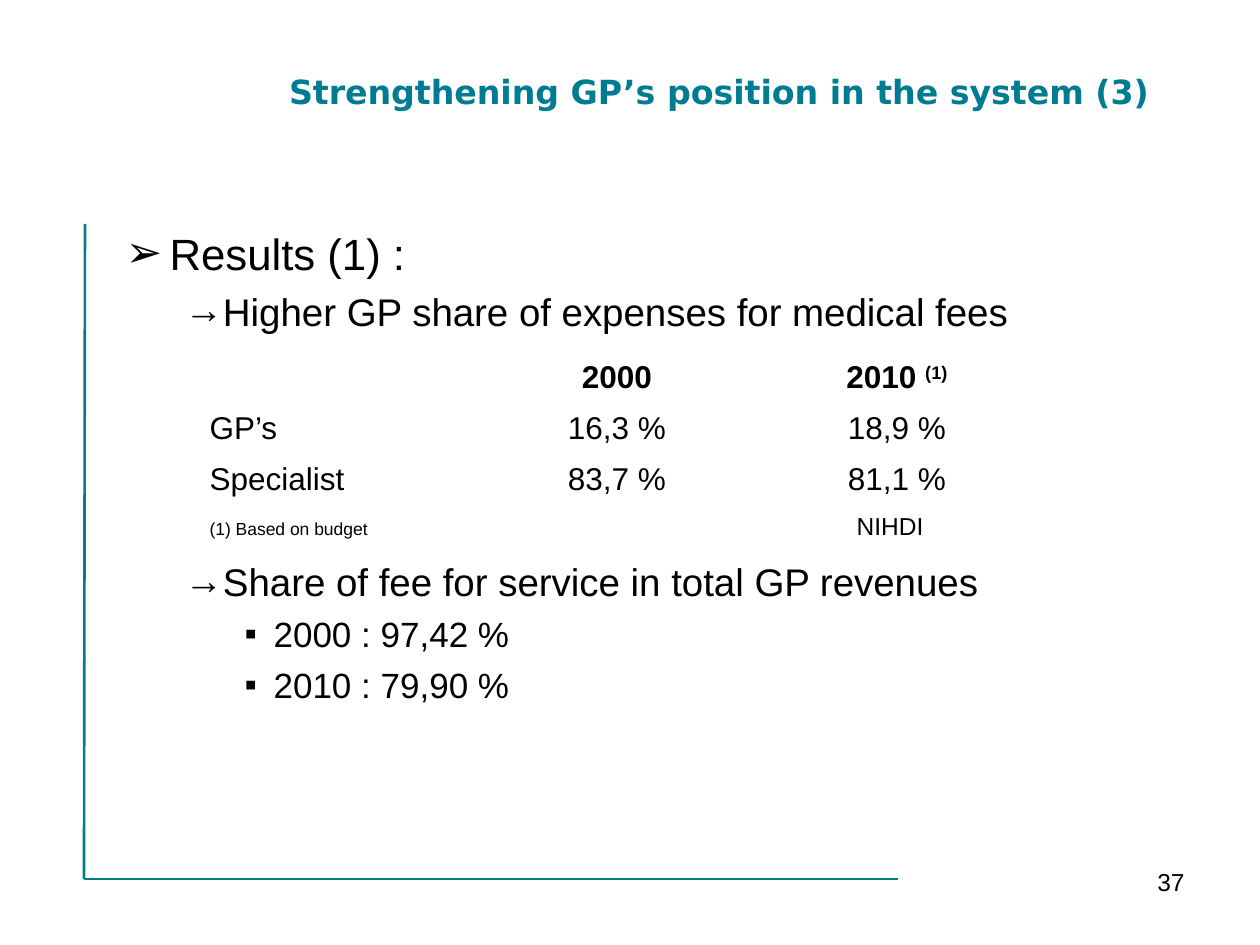
from lxml.etree import SubElement
from pptx import Presentation
from pptx.dml.color import RGBColor
from pptx.enum.shapes import MSO_CONNECTOR
from pptx.enum.text import MSO_ANCHOR, MSO_AUTO_SIZE, PP_ALIGN
from pptx.oxml import parse_xml
from pptx.oxml.ns import nsdecls, qn
from pptx.util import Emu, Pt

TEAL = RGBColor(0x00, 0x80, 0x80)
TITLE_BLUE = RGBColor(0x00, 0x7C, 0x92)
BLACK = RGBColor(0x00, 0x00, 0x00)
WHITE = RGBColor(0xFF, 0xFF, 0xFF)

EMU_PER_PX = 914400 / 126


def px(length):
    return Emu(round(length * EMU_PER_PX))


class SlideBuilder:
    font = "Arial"
    title_font = "DejaVu Sans"
    # Bullet, text indent, hanging indent and text size of each level
    levels = [("➢", 44, 44, 25), ("→", 96, 37, 22), ("▪", 148, 29, 20)]

    def __init__(self, deck):
        self.page = deck.slides.add_slide(deck.slide_layouts[1])

    def place(self, shape, left, top, width, height):
        shape.left, shape.top = px(left), px(top)
        shape.width, shape.height = px(width), px(height)
        frame = shape.text_frame
        frame.word_wrap = True
        frame.auto_size = MSO_AUTO_SIZE.NONE
        return frame

    def add_span(self, para, text, size, color=BLACK, bold=False, font=None):
        span = para.add_run()
        span.text = text
        span.font.name = font or self.font
        span.font.size = Pt(size)
        span.font.bold = bold
        span.font.color.rgb = color
        return span

    def line(self, start, end):
        rule = self.page.shapes.add_connector(
            MSO_CONNECTOR.STRAIGHT, *map(px, start + end))
        rule.line.color.rgb = TEAL
        rule.line.width = Pt(1.5)
        SubElement(rule._element.spPr, qn("a:effectLst"))

    def title(self, text, *place):
        frame = self.place(self.page.shapes.title, *place)
        frame.vertical_anchor = MSO_ANCHOR.MIDDLE
        para = frame.paragraphs[0]
        para.alignment = PP_ALIGN.CENTER
        self.add_span(para, text, 19, TITLE_BLUE, True, self.title_font)

    def bullets(self, items, *place):
        frame = self.place(self.page.placeholders[1], *place)
        frame.vertical_anchor = MSO_ANCHOR.TOP
        for number, (level, text, space) in enumerate(items):
            para = frame.add_paragraph() if number else frame.paragraphs[0]
            bullet, indent, hanging, size = self.levels[level]
            para.level = level
            properties = para._p.get_or_add_pPr()
            properties.set("marL", str(px(indent)))
            properties.set("indent", str(-px(hanging)))
            SubElement(properties, qn("a:buFont"), typeface=self.font)
            SubElement(properties, qn("a:buChar"), char=bullet)
            para.space_before = Pt(space)
            self.add_span(para, text, size)

    def label(self, text, size, *place):
        box = self.page.shapes.add_textbox(0, 0, 0, 0)
        para = self.place(box, *place).paragraphs[0]
        para.alignment = PP_ALIGN.RIGHT
        self.add_span(para, text, size)

    def border(self, cell, bottom):
        properties = cell._tc.get_or_add_tcPr()
        for index, side in enumerate("LRTB"):
            width = Pt(bottom if side == "B" else 1)
            properties.insert(index, parse_xml(
                f'<a:ln{side} {nsdecls("a")} w="{int(width)}"><a:solidFill>'
                f'<a:srgbClr val="{WHITE}"/></a:solidFill></a:ln{side}>'))

    def table(self, rows, left, top, column_width, row_height):
        count, columns = len(rows), len(rows[0])
        table = self.page.shapes.add_table(
            count, columns, px(left), px(top),
            px(column_width * columns), px(row_height * count)).table
        table.first_row = table.horz_banding = False
        for row_number, row in enumerate(rows):
            table.rows[row_number].height = px(row_height)
            for column, text in enumerate(row):
                cell = table.cell(row_number, column)
                cell.fill.background()
                self.border(cell, 1 if row_number else 3)
                para = cell.text_frame.paragraphs[0]
                para.alignment = PP_ALIGN.CENTER if column else PP_ALIGN.LEFT
                if text:
                    self.add_span(para, text, 18, bold=row_number == 0)
        return table

    def tab_stop(self, para, position):
        tabs = SubElement(para._p.get_or_add_pPr(), qn("a:tabLst"))
        SubElement(tabs, qn("a:tab"), pos=str(px(position)), algn="l")


def main():
    deck = Presentation()
    deck.slide_width, deck.slide_height = px(1260), px(945)
    builder = SlideBuilder(deck)

    # Frame lines
    builder.line((85, 224), (84, 879))
    builder.line((898, 879), (84, 879))

    # Title and list; the second arrow leaves room for the table
    builder.title("Strengthening GP’s position in the system (3) ",
                  253, 38, 944, 107)
    builder.bullets([
        (0, "Results (1) :", 0),
        (1, "Higher GP share of expenses for medical fees", 5),
        (1, "Share of fee for service in total GP revenues", 128),
        (2, "2000 : 97,42 %", 5),
        (2, "2010 : 79,90 %", 5),
    ], 113, 220, 1084, 624)

    # Page number
    builder.label("37", 14, 903, 861, 294, 66)

    # Share of expenses, with a footnote across the last row
    table = builder.table([
        ("", "2000", "2010 "),
        ("GP’s", "16,3 %", "18,9 %"),
        ("Specialist", "83,7 %", "81,1 %"),
        ("", "", ""),
    ], 197, 354, 280, 51)
    header = table.cell(0, 2).text_frame.paragraphs[0]
    mark = builder.add_span(header, "(1)", 18, bold=True)
    mark.font._element.set("baseline", "30000")

    table.cell(3, 0).merge(table.cell(3, 2))
    note = table.cell(3, 0).text_frame.paragraphs[0]
    builder.tab_stop(note, 647)
    builder.add_span(note, "(1) Based on budget\t", 10)
    builder.add_span(note, "NIHDI", 14)

    deck.save("out.pptx")


if __name__ == "__main__":
    main()
